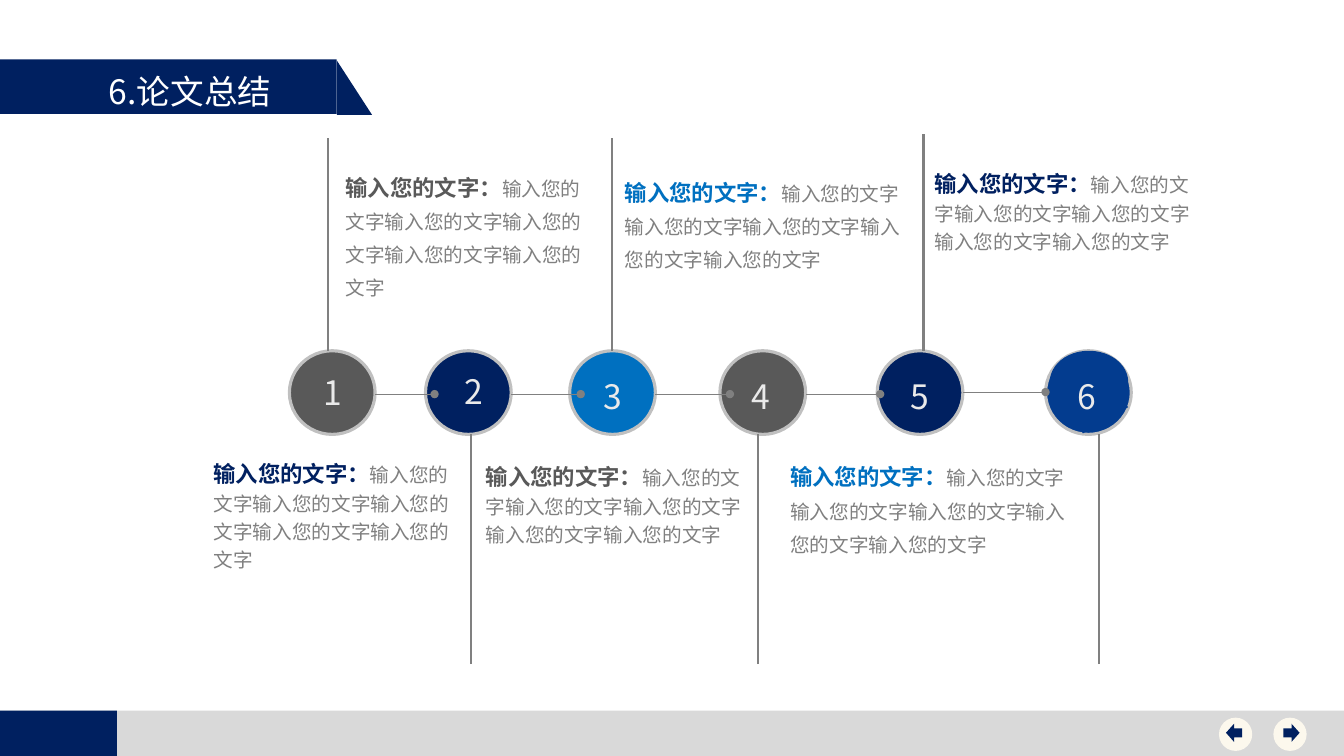
from dataclasses import dataclass

from lxml.etree import SubElement
from pptx import Presentation
from pptx.dml.color import RGBColor
from pptx.enum.shapes import MSO_CONNECTOR, MSO_SHAPE
from pptx.enum.text import MSO_ANCHOR, MSO_AUTO_SIZE, PP_ALIGN
from pptx.oxml.ns import qn
from pptx.util import Inches, Pt


@dataclass(frozen=True)
class Theme:
    font: str = "Noto Sans CJK SC"
    navy: str = "002060"
    blue: str = "0070C0"
    royal: str = "033C8F"
    dark: str = "595959"
    gray: str = "808080"
    ring: str = "C0C0C0"
    strip: str = "D9D9D9"
    cream: str = "FCF8ED"
    digit: str = "EAEAEA"
    white: str = "FFFFFF"
    title_size: int = 24
    heading_size: int = 16
    body_size: int = 14


T = Theme()

# Content
TITLE = "6.论文总结"
HEADING = "输入您的文字："
BODY = "输入您的文字" * 5
LOOSE, TIGHT = (1.4, 0), (1.2, 12)  # line spacing, space around in points

# Circle left, fill, digit box (left, top, width), stem x, stem end y
STEPS = [
    (2.87, T.dark, (3.11, 3.64, 0.27), 3.25, 1.37),
    (4.22, T.navy, (4.51, 3.63, 0.27), 4.67, 6.59),
    (5.65, T.blue, (5.87, 3.68, 0.42), 6.07, 1.37),
    (7.14, T.dark, (7.34, 3.68, 0.42), 7.52, 6.59),
    (8.70, T.navy, (8.91, 3.68, 0.42), 9.16, 1.33),
    (10.37, T.royal, (10.57, 3.68, 0.42), 10.9, 6.59),
]
# Links run from a dot at (x, y) back to the preceding circle
LINK_DOTS = [(4.31, 3.91), (5.76, 3.91), (7.24, 3.91), (8.73, 3.91), (10.37, 3.89)]
# Text box, heading colour, spacing
NOTES = [
    ((3.33, 1.57, 2.54, 1.47), T.dark, LOOSE),
    ((6.10, 1.62, 2.95, 1.14), T.blue, LOOSE),
    ((9.17, 1.59, 2.83, 0.99), T.navy, TIGHT),
    ((2.02, 4.46, 2.66, 1.89), T.navy, TIGHT),
    ((4.72, 4.49, 2.87, 0.99), T.dark, TIGHT),
    ((7.74, 4.44, 3.01, 1.14), T.blue, LOOSE),
]
# Shading on the last circle: two Bezier arcs and a closing corner
SHADES = [
    ([((11.19, 3.79), (11.19, 3.62), (11.02, 3.48), (10.8, 3.48)),
      ((10.8, 3.48), (10.58, 3.48), (10.41, 3.62), (10.41, 3.8))], (10.8, 3.8)),
    ([((11.19, 4.04), (11.15, 3.98), (11.02, 3.99), (10.9, 4.06)),
      ((10.9, 4.06), (10.77, 4.13), (10.7, 4.24), (10.74, 4.3))], (10.96, 4.17)),
]
# Navigation button left, arrow left, arrow shape
BUTTONS = [(12.63, 12.73, MSO_SHAPE.RIGHT_ARROW), (12.09, 12.16, MSO_SHAPE.LEFT_ARROW)]

CIRCLE_TOP, CIRCLE_W, CIRCLE_H = 3.48, 0.85, 0.83
CURVE_STEPS = 12

prs = Presentation()
prs.slide_width, prs.slide_height = Inches(13.33), Inches(7.5)
slide = prs.slides.add_slide(prs.slide_layouts[5])
shapes = slide.shapes


def paint(shape, fill, line=None):
    shape.shadow.inherit = False
    shape.fill.solid()
    shape.fill.fore_color.rgb = RGBColor.from_string(fill)
    if line:
        shape.line.color.rgb = RGBColor.from_string(line)
        shape.line.width = Pt(2.25)
    else:
        shape.line.fill.background()


def add_block(kind, box, fill, line=None):
    paint(shapes.add_shape(kind, *map(Inches, box)), fill, line)


def add_line(start, end, width, dot=False):
    line = shapes.add_connector(MSO_CONNECTOR.STRAIGHT, *map(Inches, start + end))
    line.line.color.rgb = RGBColor.from_string(T.gray)
    line.line.width = Pt(width)
    if dot:
        SubElement(line.line._get_or_add_ln(), qn("a:headEnd"), type="oval")
    SubElement(line._element.spPr, qn("a:effectLst"))


def style(run, size, color, bold=False):
    run.font.size, run.font.bold, run.font.name = Pt(size), bold, T.font
    run.font.color.rgb = RGBColor.from_string(color)
    SubElement(run.font._element, qn("a:ea"), typeface=T.font)


def curve_point(curve, t):
    weights = ((1 - t) ** 3, 3 * t * (1 - t) ** 2, 3 * t * t * (1 - t), t ** 3)
    return tuple(sum(w * p[axis] for w, p in zip(weights, curve)) for axis in (0, 1))


# Footer strip and navigation
add_block(MSO_SHAPE.RECTANGLE, (0, 7.05, 13.33, 0.45), T.strip)
add_block(MSO_SHAPE.RECTANGLE, (0, 7.05, 1.16, 0.45), T.navy)
for button_left, arrow_left, arrow in BUTTONS:
    add_block(MSO_SHAPE.OVAL, (button_left, 7.12, 0.33, 0.33), T.cream)
    add_block(arrow, (arrow_left, 7.18, 0.16, 0.18), T.navy)

# Title banner
add_block(MSO_SHAPE.RECTANGLE, (0, 0.59, 3.34, 0.54), T.navy)
add_block(MSO_SHAPE.RIGHT_TRIANGLE, (3.34, 0.6, 0.35, 0.54), T.navy)
title = shapes.title
title.left, title.top, title.width, title.height = map(Inches, (0.98, 0.65, 2.07, 0.5))
title.text_frame.text = TITLE
title.text_frame.vertical_anchor = MSO_ANCHOR.MIDDLE
title.text_frame.auto_size = MSO_AUTO_SIZE.NONE
title_line = title.text_frame.paragraphs[0]
title_line.alignment = PP_ALIGN.LEFT
style(title_line.runs[0], T.title_size, T.white)
shapes._spTree.append(title._element)  # in front of the banner

# Circles and shading
for left, fill, *_ in STEPS:
    add_block(MSO_SHAPE.OVAL, (left, CIRCLE_TOP, CIRCLE_W, CIRCLE_H), fill, T.ring)
for curves, corner in SHADES:
    outline = [curve_point(c, i / CURVE_STEPS) for c in curves for i in range(CURVE_STEPS + 1)]
    outline = [(Inches(x), Inches(y)) for x, y in outline + [corner]]
    builder = shapes.build_freeform(*outline[0])
    builder.add_line_segments(outline[1:], close=True)
    paint(builder.convert_to_shape(), T.royal)

# Links between circles
for (left, *_), (x, y) in zip(STEPS, LINK_DOTS):
    add_line((x, y), (left + CIRCLE_W, y), 0.75, dot=True)

# Digits and stems
for number, (_, _, (left, top, width), stem_x, stem_end) in enumerate(STEPS, 1):
    digit = shapes.add_textbox(*map(Inches, (left, top, width, 0.47))).text_frame
    digit.text = str(number)
    digit.word_wrap = False
    digit.paragraphs[0].alignment = PP_ALIGN.CENTER
    style(digit.paragraphs[0].runs[0], T.title_size, T.digit)
    stem_start = CIRCLE_TOP if stem_end < CIRCLE_TOP else CIRCLE_TOP + CIRCLE_H
    add_line((stem_x, stem_end), (stem_x, stem_start), 1.5)

# Notes
for box, color, (spacing, gap) in NOTES:
    note = shapes.add_textbox(*map(Inches, box)).text_frame
    note.word_wrap = True
    note.auto_size = MSO_AUTO_SIZE.SHAPE_TO_FIT_TEXT
    note.text = HEADING
    paragraph = note.paragraphs[0]
    paragraph.line_spacing = spacing
    paragraph.space_before = paragraph.space_after = Pt(gap)
    style(paragraph.runs[0], T.heading_size, color, bold=True)
    body = paragraph.add_run()
    body.text = BODY
    style(body, T.body_size, T.gray)

prs.save("out.pptx")
